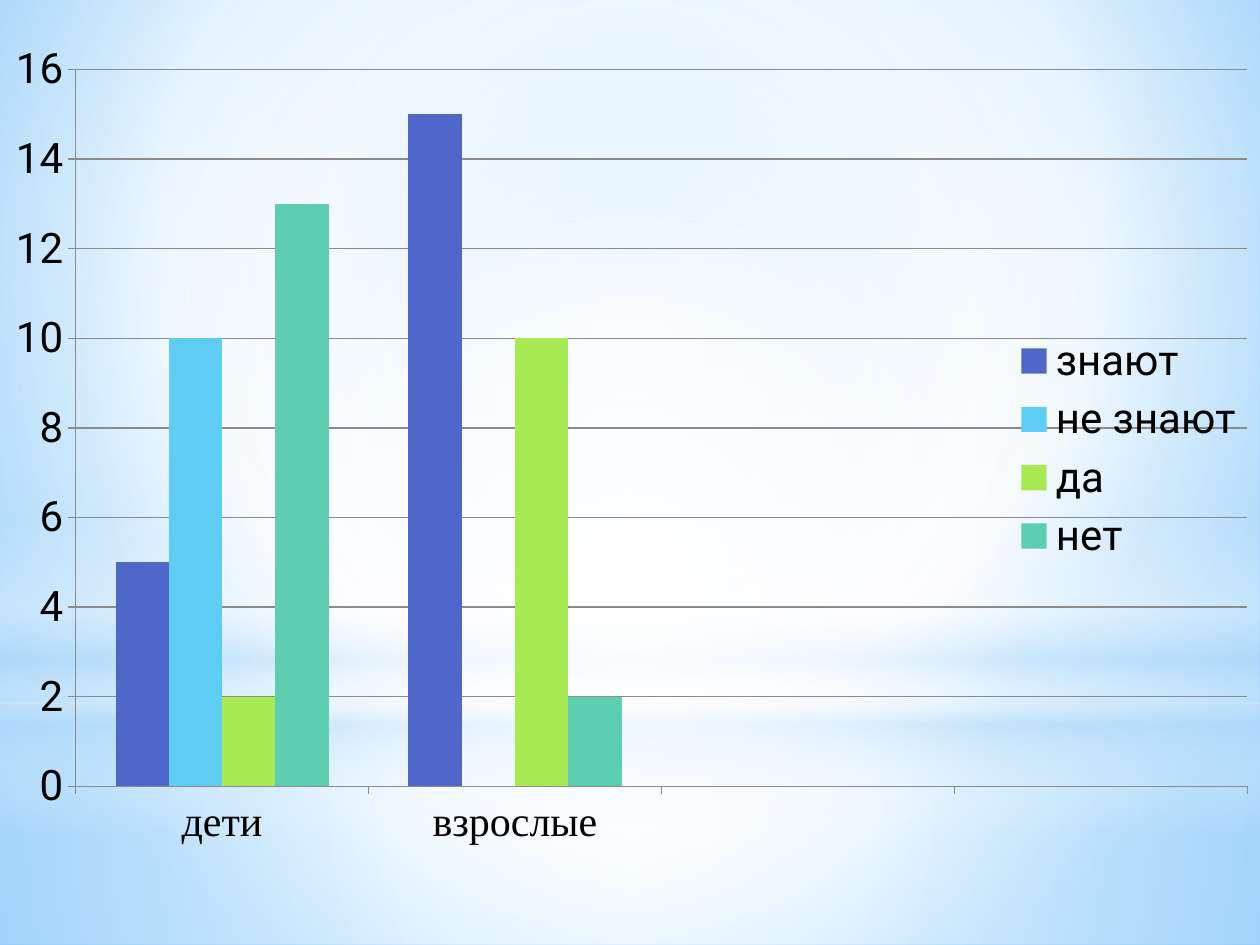
from dataclasses import dataclass
from typing import Optional

from lxml import etree
from pptx import Presentation
from pptx.chart.data import CategoryChartData
from pptx.dml.color import RGBColor
from pptx.enum.chart import XL_CHART_TYPE, XL_LEGEND_POSITION, XL_TICK_MARK
from pptx.enum.shapes import MSO_SHAPE
from pptx.oxml import parse_xml
from pptx.oxml.ns import nsdecls, qn
from pptx.util import Inches, Pt

COLUMN = XL_CHART_TYPE.COLUMN_CLUSTERED
RIGHT = XL_LEGEND_POSITION.RIGHT
OUT = XL_TICK_MARK.OUTSIDE
RECT = MSO_SHAPE.RECTANGLE
OVAL = MSO_SHAPE.OVAL

BLACK = RGBColor(0x00, 0x00, 0x00)
GREY = RGBColor(0x8B, 0x8B, 0x8B)
WHITE = RGBColor(0xFF, 0xFF, 0xFF)
PALE = RGBColor(0xB4, 0xDC, 0xFA)
SKY = RGBColor(0x9E, 0xD5, 0xFF)
AZURE = RGBColor(0x5B, 0xB9, 0xFF)
INDIGO = RGBColor(0x4E, 0x67, 0xC8)
CYAN = RGBColor(0x5E, 0xCC, 0xF3)
LIME = RGBColor(0xA7, 0xEA, 0x52)
TEAL = RGBColor(0x5D, 0xCE, 0xAF)

SANS = "Roboto"
SERIF = "Times New Roman"
CENTRE = (50, 50, 50, 50)


@dataclass
class Stop:
    pos: int
    color: RGBColor
    alpha: int = 100


@dataclass
class Glow:
    stops: list[Stop]
    focus: Optional[tuple[int, int, int, int]] = CENTRE


@dataclass
class Layer:
    kind: int
    top: float
    height: float
    glow: Glow


@dataclass
class Group:
    name: str
    values: tuple
    color: RGBColor


BACK = Glow([Stop(0, SKY), Stop(60, WHITE), Stop(100, AZURE)], (20, 10, 20, 60))
LAYERS = [
    Layer(RECT, 5.58, 1.92, Glow(
        [Stop(0, WHITE, 91), Stop(37, WHITE, 76), Stop(100, PALE, 79)])),
    Layer(RECT, 0, 5.58, Glow(
        [Stop(0, WHITE, 89), Stop(48, WHITE, 62), Stop(100, PALE, 79)])),
    Layer(RECT, 4.12, 2.5, Glow(
        [Stop(0, WHITE, 0), Stop(29, WHITE, 30), Stop(45, PALE, 40),
         Stop(55, WHITE, 26), Stop(65, PALE, 60), Stop(100, WHITE, 0)], None)),
    Layer(OVAL, 1.75, 5.58, Glow([Stop(0, WHITE), Stop(56, WHITE, 0)])),
]
GROUPS = [
    Group("знают", (5, 15, None, None), INDIGO),
    Group("не знают", (10, 0, None, None), CYAN),
    Group("да", (2, 10, None, None), LIME),
    Group("нет", (13, 2, None, None), TEAL),
]


def paint(fill, root, glow: Glow) -> None:
    fill.solid()
    fill.fore_color.rgb = WHITE
    old = next(root.iter(qn("a:solidFill")))
    stops = "".join(
        f'<a:gs pos="{s.pos * 1000}"><a:srgbClr val="{s.color}">'
        f'<a:alpha val="{s.alpha * 1000}"/></a:srgbClr></a:gs>'
        for s in glow.stops)
    if glow.focus:
        sides = " ".join(
            f'{side}="{part * 1000}"' for side, part in zip("ltrb", glow.focus))
        shade = f'<a:path path="circle"><a:fillToRect {sides}/></a:path>'
    else:
        shade = '<a:lin ang="5400000" scaled="0"/>'
    new = parse_xml(
        f'<a:gradFill {nsdecls("a")} rotWithShape="1">'
        f"<a:gsLst>{stops}</a:gsLst>{shade}</a:gradFill>")
    old.getparent().replace(old, new)


def add_layer(slide, layer: Layer) -> None:
    shape = slide.shapes.add_shape(
        layer.kind, Inches(0), Inches(layer.top), Inches(10), Inches(layer.height))
    shape.shadow.inherit = False
    shape.line.fill.background()
    paint(shape.fill, shape.element, layer.glow)


def set_font(font, size: int, name: str) -> None:
    font.size = Pt(size)
    font.name = name
    font.color.rgb = BLACK


def set_axis(axis, name: str) -> None:
    axis.major_tick_mark = OUT
    axis.format.line.color.rgb = GREY
    axis.format.line.width = Pt(0.75)
    set_font(axis.tick_labels.font, 24, name)


def set_plot(chart, x: float, y: float, w: float, h: float) -> None:
    area = next(chart.element.iter(qn("c:plotArea")))
    for old in area.findall(qn("c:layout")):
        area.remove(old)
    layout = etree.Element(qn("c:layout"))
    manual = etree.SubElement(layout, qn("c:manualLayout"))
    parts = {"layoutTarget": "inner", "xMode": "edge", "yMode": "edge",
             "x": x, "y": y, "w": w, "h": h}
    for tag, val in parts.items():
        etree.SubElement(manual, qn(f"c:{tag}")).set("val", str(val))
    area.insert(0, layout)


def add_bars(slide, groups: list[Group]) -> None:
    data = CategoryChartData()
    data.categories = ["дети", "взрослые", "", ""]
    for group in groups:
        data.add_series(group.name, group.values)
    chart = slide.shapes.add_chart(
        COLUMN, Inches(0), Inches(0.29), Inches(10), Inches(6.54), data).chart
    chart.has_title = False
    set_font(chart.font, 10, SANS)
    set_axis(chart.category_axis, SERIF)
    axis = chart.value_axis
    set_axis(axis, SANS)
    axis.minimum_scale, axis.maximum_scale, axis.major_unit = 0, 16, 2
    axis.has_major_gridlines = True
    axis.major_gridlines.format.line.color.rgb = GREY
    axis.major_gridlines.format.line.width = Pt(0.75)
    chart.has_legend = True
    chart.legend.position = RIGHT
    chart.legend.include_in_layout = False
    set_font(chart.legend.font, 24, SANS)
    plot = chart.plots[0]
    plot.gap_width = 150
    plot.overlap = 0
    plot.vary_by_categories = False
    for bars, group in zip(plot.series, groups):
        bars.format.fill.solid()
        bars.format.fill.fore_color.rgb = group.color
    set_plot(chart, 0.06, 0.04, 0.93, 0.87)


def main() -> None:
    deck = Presentation()
    deck.slide_width, deck.slide_height = Inches(10), Inches(7.5)
    slide = deck.slides.add_slide(deck.slide_layouts[6])
    paint(slide.background.fill, slide.element, BACK)
    for layer in LAYERS:
        add_layer(slide, layer)
    add_bars(slide, GROUPS)
    deck.save("out.pptx")


if __name__ == "__main__":
    main()
